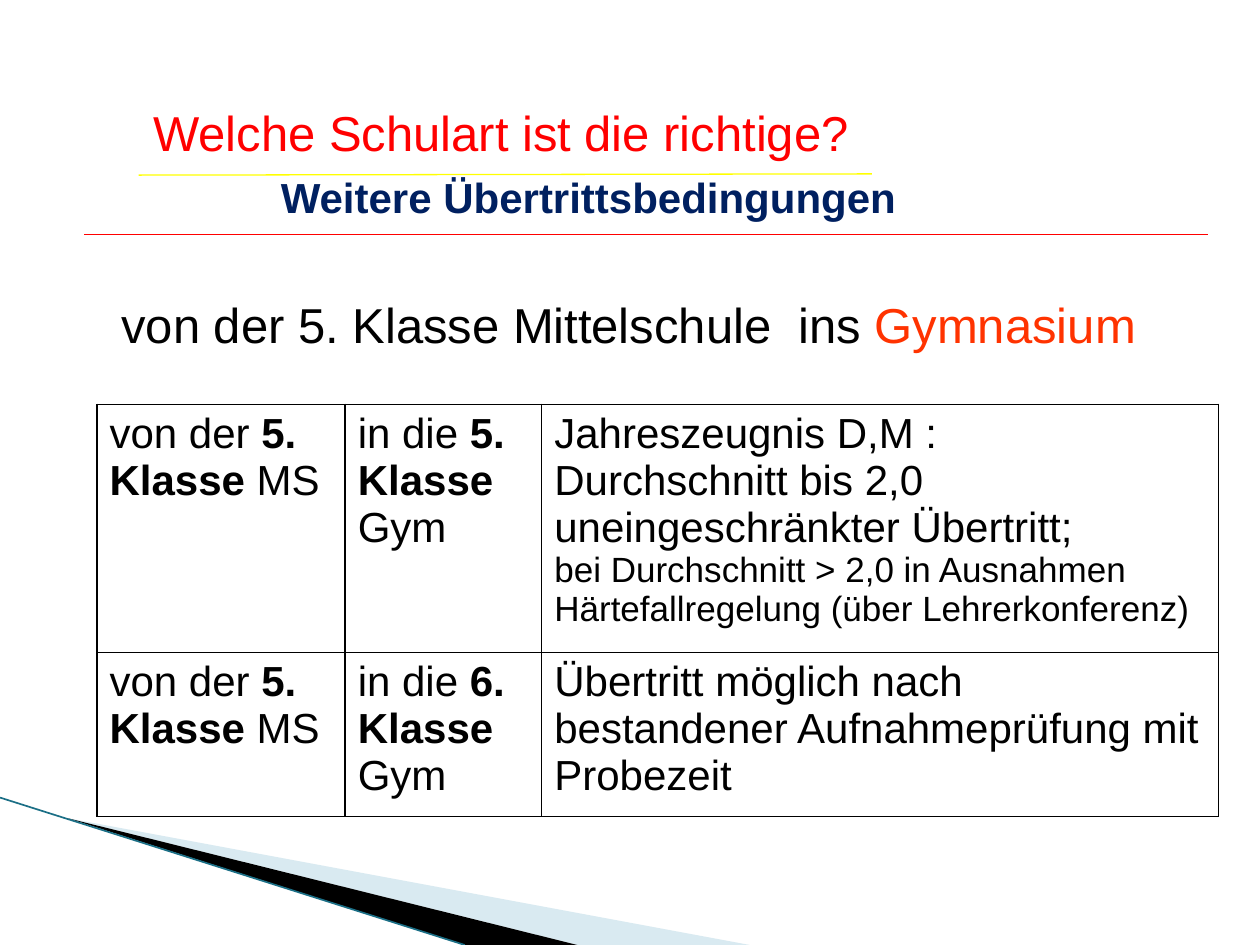
import pptx
import pptx.util
import pptx.dml.color
import pptx.enum.shapes
import pptx.enum.text
import pptx.oxml
import pptx.oxml.ns

WIDE, HIGH = pptx.util.Inches(10), pptx.util.Inches(7.5)
COLS, ROWS = 100, 75
HUES = {
    "black": "000000", "red": "FF0000", "flame": "FF3300", "navy": "002060",
    "yellow": "FFFF00", "pale": "A0CBDC", "teal": "1B6F86",
}
FONT = "Arial"


def col(n):
    return round(WIDE * n / COLS)


def row(n):
    return round(HIGH * n / ROWS)


def hue(key):
    return pptx.dml.color.RGBColor.from_string(HUES[key])


def apply(item, look):
    for key, value in look.items():
        setattr(item, key, value)


def put(para, parts):
    for text, size, tint, bold in parts:
        run = para.add_run()
        run.text = text
        apply(run.font, {"name": FONT, "size": pptx.util.Pt(size), "bold": bold})
        run.font.color.rgb = hue(tint)


def label(shape, box, parts):
    x, y, w, h = box
    apply(shape, {"left": col(x), "top": row(y), "width": col(w), "height": row(h)})
    frame = shape.text_frame
    apply(frame, {
        "word_wrap": True,
        "auto_size": pptx.enum.text.MSO_AUTO_SIZE.NONE,
        "vertical_anchor": pptx.enum.text.MSO_ANCHOR.TOP,
    })
    para = frame.paragraphs[0]
    para.alignment = pptx.enum.text.PP_ALIGN.CENTER
    put(para, parts)


def rule(slide, start, end, tint, width=0.75):
    kind = pptx.enum.shapes.MSO_CONNECTOR.STRAIGHT
    line = slide.shapes.add_connector(
        kind, col(start[0]), row(start[1]), col(end[0]), row(end[1]))
    line.line.color.rgb = hue(tint)
    line.line.width = pptx.util.Pt(width)
    line._element.spPr.append(pptx.oxml.parse_xml(
        f'<a:effectLst {pptx.oxml.ns.nsdecls("a")}/>'))


def wedge(slide, points, tint, alpha=None):
    spots = [(col(x), row(y)) for x, y in points]
    build = slide.shapes.build_freeform(*spots[0])
    build.add_line_segments(spots[1:], close=True)
    shape = build.convert_to_shape()
    shape.shadow.inherit = False
    shape.fill.solid()
    shape.fill.fore_color.rgb = hue(tint)
    shape.line.fill.background()
    if alpha:
        tone = shape._element.spPr.find(".//" + pptx.oxml.ns.qn("a:srgbClr"))
        tone.append(pptx.oxml.parse_xml(
            f'<a:alpha {pptx.oxml.ns.nsdecls("a")} val="{alpha * 1000}"/>'))


def corner(slide, box):
    x, y, w, h = box

    def spot(across, down):
        return x + w * across, y + h * down

    tip = spot(0.09, 0.14)
    wedge(slide, [tip, spot(1, 1), spot(0.77, 1)], "pale", 40)
    wedge(slide, [tip, spot(0.77, 1), spot(0.62, 1)], "black")
    rule(slide, spot(0, 0), spot(0.62, 1), "teal", 0.95)


def header(slide, box):
    x, y, w, h = box
    label(slide.shapes.title, (x, y, 66.1, 5.7),
          [("Welche Schulart ist die richtige?", 28, "red", False)])
    rule(slide, (x + 4.3, y + 6.3), (x + 62.5, y + 6.2), "yellow")
    rule(slide, (x, y + h), (x + w, y + h), "red")
    label(slide.shapes.add_textbox(0, 0, 0, 0), (x + 10.7, y + 5.5, 58.6, 5.1),
          [("Weitere Übertrittsbedingungen", 24, "navy", True)])


def lead(slide, box):
    label(slide.shapes.add_textbox(0, 0, 0, 0), box, [
        ("von der 5. Klasse Mittelschule  ins ", 28, "black", False),
        ("Gymnasium", 28, "flame", False),
        (" ", 32, "flame", False),
    ])


def edge(cell):
    props = cell._tc.get_or_add_tcPr()
    for side in ("lnL", "lnR", "lnT", "lnB"):
        props.append(pptx.oxml.parse_xml(
            f'<a:{side} {pptx.oxml.ns.nsdecls("a")} w="12700"><a:solidFill>'
            f'<a:srgbClr val="{HUES["black"]}"/></a:solidFill></a:{side}>'))
    cell.fill.background()


def step(start, grade, school):
    return [[(start, 24, "black", False), (grade + " Klasse ", 24, "black", True),
             (school, 24, "black", False)]]


def plain(*lines):
    return [[(text, size, "black", False)] for text, size in lines]


def grid(slide, box):
    x, y, w, h = box
    data = [
        [step("von der ", "5.", "MS"), step("in die ", "5.", "Gym"), plain(
            ("Jahreszeugnis D,M :", 24),
            ("Durchschnitt bis 2,0 uneingeschränkter Übertritt;", 24),
            ("bei Durchschnitt > 2,0 in Ausnahmen Härtefallregelung "
             "(über Lehrerkonferenz)", 20))],
        [step("von der ", "5.", "MS"), step("in die ", "6.", "Gym"), plain(
            ("Übertritt möglich nach bestandener Aufnahmeprüfung mit Probezeit", 24))],
    ]
    table = slide.shapes.add_table(
        len(data), len(data[0]), col(x), row(y), col(w), row(h)).table
    apply(table, {"first_row": False, "horz_banding": False})
    for item, size in zip(table.columns, (19.7, 15.6, 53.7)):
        item.width = col(size)
    for item, size in zip(table.rows, (19.7, 13)):
        item.height = row(size)
    for r, line in enumerate(data):
        for c, paras in enumerate(line):
            cell = table.cell(r, c)
            edge(cell)
            frame = cell.text_frame
            for n, parts in enumerate(paras):
                put(frame.add_paragraph() if n else frame.paragraphs[0], parts)


def main():
    deck = pptx.Presentation()
    apply(deck, {"slide_width": WIDE, "slide_height": HIGH})
    slide = deck.slides.add_slide(deck.slide_layouts[5])
    corner(slide, (0, 63.3, 59.5, 11.7))
    header(slide, (6.7, 7.6, 89.2, 11))
    lead(slide, (5.9, 22.3, 89.2, 6.4))
    grid(slide, (7.7, 32.1, 89, 32.7))
    deck.save("out.pptx")


if __name__ == "__main__":
    main()
